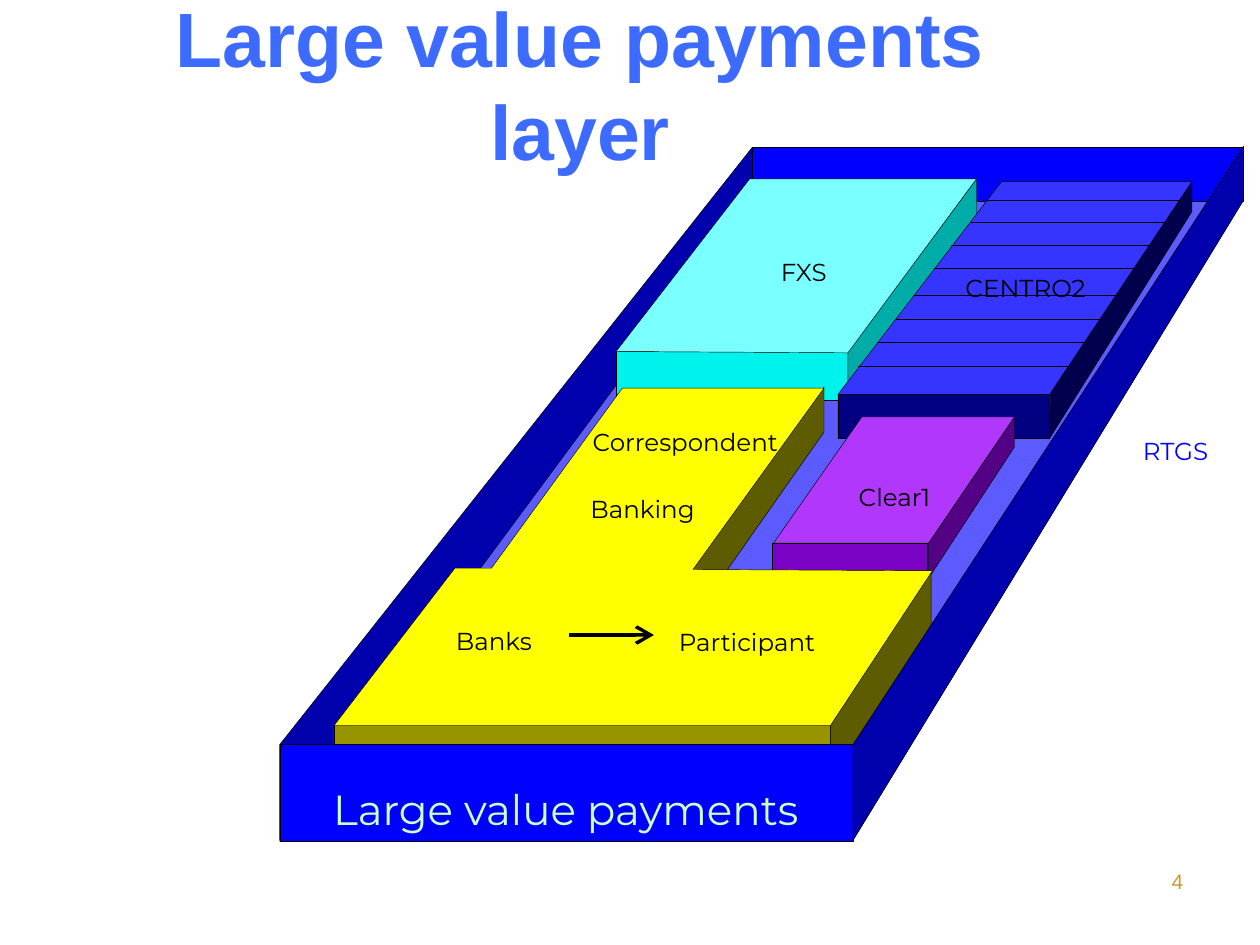
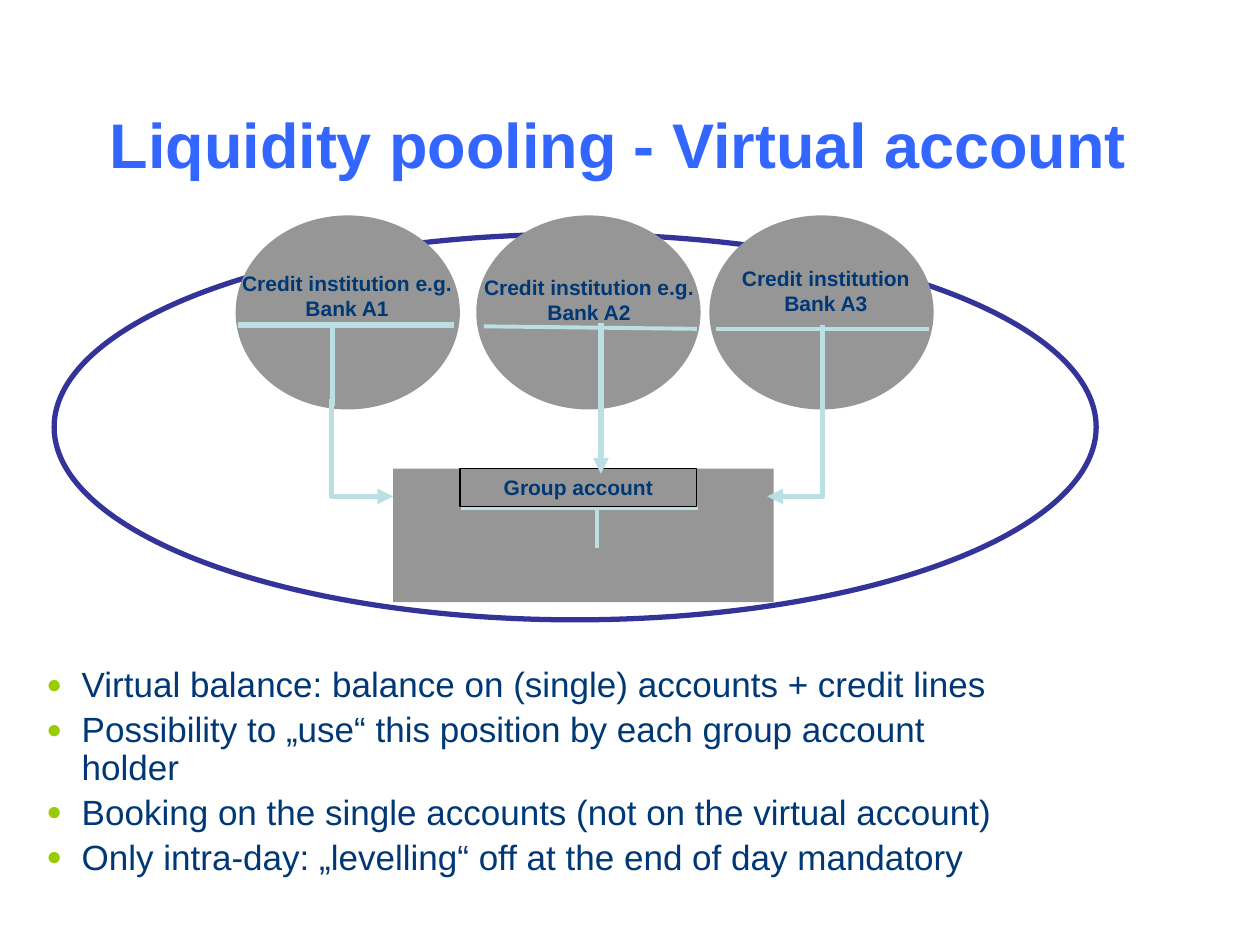
from dataclasses import dataclass

from lxml import etree
from pptx import Presentation
from pptx.dml.color import RGBColor
from pptx.enum.shapes import MSO_CONNECTOR, MSO_SHAPE
from pptx.enum.text import MSO_ANCHOR, PP_ALIGN
from pptx.oxml.ns import qn
from pptx.util import Inches, Pt

RECTANGLE, OVAL = MSO_SHAPE.RECTANGLE, MSO_SHAPE.OVAL
STRAIGHT = MSO_CONNECTOR.STRAIGHT
TOP, MIDDLE = MSO_ANCHOR.TOP, MSO_ANCHOR.MIDDLE
LEFT, CENTER, RIGHT = PP_ALIGN.LEFT, PP_ALIGN.CENTER, PP_ALIGN.RIGHT


@dataclass(frozen=True)
class Theme:
    heading_font: str = "Arial"
    label_font: str = "Montserrat"
    black: str = "000000"
    layer_title: str = "3D6BFF"
    pool_title: str = "3366FF"
    page_number: str = "CC9933"
    blue: str = "0000FF"
    tray_side: str = "0000AC"
    tray_floor: str = "5B5BFF"
    tray_text: str = "CCFFCC"
    # Each block: front, side, top
    cyan: tuple = ("00F2EC", "00ACA8", "79FFFF")
    navy: tuple = ("000080", "00004C", "3535FF")
    purple: tuple = ("7A02C4", "530185", "B237FD")
    yellow: tuple = ("989400", "5E5C00", "FFFF00")
    pool_ring: str = "333399"
    gray: str = "969696"
    flow: str = "BBE0E3"
    body: str = "003876"
    bullet: str = "99CC00"
    layer_title_size: int = 44
    pool_title_size: int = 36
    tray_size: int = 24
    body_size: int = 20
    label_size: int = 14
    small_size: int = 12
    hairline: float = 0.25
    thin: float = 0.75
    arrow: float = 2
    medium: float = 2.25
    thick: float = 3


THEME = Theme()


def rgb(color):
    return RGBColor.from_string(color)


def paint(shape, fill=None, line=None, width=THEME.hairline):
    shape.shadow.inherit = False
    if fill:
        shape.fill.solid()
        shape.fill.fore_color.rgb = rgb(fill)
    else:
        shape.fill.background()
    if line:
        shape.line.width = Pt(width)
        shape.line.color.rgb = rgb(line)
    else:
        shape.line.fill.background()


def write(shape, text, size, color, font=THEME.heading_font, bold=False,
          align=CENTER, anchor=TOP, wrap=True):
    """Fill a shape with text, one paragraph per line of text."""
    frame = shape.text_frame
    frame.text = text
    frame.word_wrap = wrap
    frame.vertical_anchor = anchor
    for paragraph in frame.paragraphs:
        paragraph.alignment = align
        for run in paragraph.runs:
            run.font.name = font
            run.font.size = Pt(size)
            run.font.bold = bold
            run.font.color.rgb = rgb(color)
    return frame


def add_text(slide, box, text, size, color, **style):
    shape = slide.shapes.add_textbox(*map(Inches, box))
    return write(shape, text, size, color, **style)


def add_title(slide, box, text, size, color):
    frame = add_text(slide, box, text, size, color, bold=True, anchor=MIDDLE)
    frame.margin_top = frame.margin_bottom = 0


def add_label(slide, center_x, top, text, color=THEME.black,
              size=THEME.label_size, width=1.3):
    """Add a one-line label centred on center_x."""
    add_text(slide, (center_x - width / 2, top, width, 0.34), text, size, color,
             font=THEME.label_font, wrap=False)


def add_box(slide, kind, box, fill=None, line=None, width=THEME.hairline):
    shape = slide.shapes.add_shape(kind, *map(Inches, box))
    paint(shape, fill, line, width)
    return shape


def add_outline(slide, points, closed=True):
    corners = [(Inches(x), Inches(y)) for x, y in points]
    builder = slide.shapes.build_freeform(*corners[0], scale=1.0)
    builder.add_line_segments(corners[1:], close=closed)
    return builder.convert_to_shape()


def add_face(slide, points, fill):
    paint(add_outline(slide, points), fill, THEME.black)


def add_block(slide, colors, front, sides, top):
    """Draw a solid block: front rectangle, side faces, then the top face."""
    front_color, side_color, top_color = colors
    add_box(slide, RECTANGLE, front, front_color, THEME.black)
    for side in sides:
        add_face(slide, side, side_color)
    add_face(slide, top, top_color)


def add_arrowhead(shape, kind, size="med"):
    line = shape._element.spPr.find(qn("a:ln"))
    etree.SubElement(line, qn("a:tailEnd"), type=kind, w=size, len=size)


def add_line(slide, start, end, color, width):
    connector = slide.shapes.add_connector(STRAIGHT, *map(Inches, (*start, *end)))
    connector.line.width = Pt(width)
    connector.line.color.rgb = rgb(color)
    etree.SubElement(connector._element.spPr, qn("a:effectLst"))
    return connector


def add_elbow_arrow(slide, points):
    shape = add_outline(slide, points, closed=False)
    paint(shape, None, THEME.flow, THEME.thick)
    add_arrowhead(shape, "triangle")


def add_bullets(slide, box, items):
    frame = add_text(slide, box, "\n".join(items), THEME.body_size, THEME.body,
                     align=LEFT)
    for index, paragraph in enumerate(frame.paragraphs):
        paragraph.line_spacing = 0.9
        if index:
            paragraph.space_before = Pt(4)
        properties = paragraph._p.get_or_add_pPr()
        properties.set("marL", str(Inches(0.28)))
        properties.set("indent", str(-Inches(0.28)))
        color = etree.SubElement(properties, qn("a:buClr"))
        etree.SubElement(color, qn("a:srgbClr"), val=THEME.bullet)
        etree.SubElement(properties, qn("a:buSzPct"), val="75000")
        etree.SubElement(properties, qn("a:buFont"), typeface=THEME.heading_font)
        etree.SubElement(properties, qn("a:buChar"), char="●")


def add_stripes(slide):
    """Rule lines across the navy block's slanted top."""
    heights = (1.59, 1.76, 1.95, 2.13, 2.34, 2.53, 2.72, 2.91)
    for y in heights:
        share = (y - heights[0]) / (heights[-1] - heights[0])
        add_line(slide, (7.83 - 1.02 * share, y), (9.36 - 0.88 * share, y),
                 THEME.black, THEME.hairline)


def build_layer_slide(slide):
    add_title(slide, (1.07, 0.27, 7.07, 0.78), "Large value payments layer",
              THEME.layer_title_size, THEME.layer_title)

    # Back of the tray
    add_face(slide, [(2.22, 5.91), (5.97, 1.17), (5.97, 1.6), (2.22, 6.67)],
             THEME.tray_side)
    add_face(slide, [(2.23, 6.65), (5.97, 1.6), (9.86, 1.6), (6.77, 6.67)],
             THEME.tray_floor)
    add_box(slide, RECTANGLE, (5.97, 1.17, 3.9, 0.43), THEME.blue, THEME.black)

    # Blocks standing in the tray
    add_block(slide, THEME.cyan, (4.89, 2.79, 1.84, 0.39),
              [[(6.73, 2.79), (7.75, 1.42), (7.75, 1.76), (6.73, 3.18)]],
              [(4.89, 2.79), (5.95, 1.42), (7.75, 1.42), (6.73, 2.8)])
    add_label(slide, 6.38, 1.99, "FXS")

    add_block(slide, THEME.navy, (6.65, 3.13, 1.68, 0.35),
              [[(8.34, 3.12), (9.46, 1.44), (9.46, 1.68), (8.33, 3.48)]],
              [(6.65, 3.13), (7.95, 1.44), (9.46, 1.44), (8.33, 3.13)])
    add_label(slide, 8.14, 2.12, "CENTRO2")
    add_stripes(slide)
    add_label(slide, 9.33, 3.41, "RTGS", THEME.blue)

    add_block(slide, THEME.purple, (6.13, 4.31, 1.23, 0.29),
              [[(7.37, 4.31), (8.05, 3.31), (8.05, 3.55), (7.37, 4.59)]],
              [(6.14, 4.31), (6.84, 3.31), (8.05, 3.31), (7.37, 4.31)])
    add_label(slide, 7.1, 3.78, "Clear1")

    add_block(slide, THEME.yellow, (2.65, 5.76, 3.94, 0.64),
              [[(6.59, 5.76), (7.39, 4.53), (7.39, 5.07), (6.59, 6.39)],
               [(5.5, 4.51), (6.54, 3.07), (6.54, 3.43), (5.5, 4.91)]],
              [(2.65, 5.76), (3.61, 4.51), (3.9, 4.51), (4.94, 3.08),
               (6.54, 3.08), (5.5, 4.52), (7.4, 4.53), (6.59, 5.76)])
    add_label(slide, 5.44, 3.34, "Correspondent", width=1.8)
    add_label(slide, 5.1, 3.87, "Banking")
    add_label(slide, 3.92, 4.92, "Banks")
    add_label(slide, 5.93, 4.93, "Participant", width=1.5)
    arrow = add_line(slide, (4.52, 5.04), (5.19, 5.04), THEME.black, THEME.arrow)
    add_arrowhead(arrow, "arrow", "lg")

    # Front of the tray
    add_box(slide, RECTANGLE, (2.22, 5.91, 4.55, 0.77), THEME.blue, THEME.black)
    add_label(slide, 4.49, 6.17, "Large value payments", THEME.tray_text,
              THEME.tray_size, width=4.42)
    add_face(slide, [(6.77, 5.91), (9.87, 1.16), (9.87, 1.59), (6.77, 6.67)],
             THEME.tray_side)

    add_text(slide, (8.65, 6.84, 0.84, 0.39), "4", THEME.small_size,
             THEME.page_number, align=RIGHT)


def build_pooling_slide(slide):
    add_title(slide, (0.51, 0.84, 8.8, 0.6), "Liquidity pooling - Virtual account",
              THEME.pool_title_size, THEME.pool_title)
    add_box(slide, OVAL, (0.43, 1.86, 8.27, 3.06), None, THEME.pool_ring, THEME.thick)
    for bank_left in (1.87, 3.78, 5.63):
        add_box(slide, OVAL, (bank_left, 1.71, 1.78, 1.54), THEME.gray)
    add_box(slide, RECTANGLE, (3.12, 3.72, 3.02, 1.06), THEME.gray)

    # Label box, account line and stem of each bank
    banks = [
        ((1.77, 2.1), "Credit institution e.g.\vBank A1",
         (1.89, 2.58), (3.6, 2.58), THEME.thick, (2.64, 2.57)),
        ((3.69, 2.13), "Credit institution e.g.\vBank A2",
         (3.84, 2.59), (5.53, 2.61), THEME.medium, (4.77, 2.56)),
        ((5.57, 2.06), "Credit institution Bank A3",
         (5.68, 2.61), (7.37, 2.61), THEME.medium, (6.53, 2.58)),
    ]
    for corner, name, line_start, line_end, width, stem in banks:
        add_line(slide, line_start, line_end, THEME.flow, width)
        add_text(slide, (*corner, 1.97, 0.5), name, THEME.small_size, THEME.body,
                 bold=True)
        stem_x, stem_y = stem
        add_line(slide, stem, (stem_x, stem_y + 0.65), THEME.flow, THEME.thick)

    add_line(slide, (3.66, 4.03), (5.54, 4.03), THEME.flow, THEME.medium)
    add_line(slide, (4.74, 4.02), (4.74, 4.35), THEME.flow, THEME.medium)
    group_account = add_box(slide, RECTANGLE, (3.65, 3.72, 1.88, 0.3), None,
                            THEME.black, THEME.thin)
    write(group_account, "Group account", THEME.small_size, THEME.body, bold=True,
          anchor=MIDDLE)

    add_elbow_arrow(slide, [(2.63, 3.17), (2.63, 3.94), (3.12, 3.94)])
    arrow = add_line(slide, (4.77, 3.16), (4.77, 3.76), THEME.flow, THEME.thick)
    add_arrowhead(arrow, "triangle")
    add_elbow_arrow(slide, [(6.53, 3.22), (6.53, 3.94), (6.09, 3.94)])

    add_bullets(slide, (0.27, 5.25, 8.59, 1.85), [
        "Virtual balance: balance on (single) accounts + credit lines",
        "Possibility to „use“ this position by each group account\vholder",
        "Booking on the single accounts (not on the virtual account)",
        "Only intra-day: „levelling“ off at the end of day mandatory",
    ])


def main():
    presentation = Presentation()
    presentation.slide_width = Inches(10)
    presentation.slide_height = Inches(7.5)
    blank = presentation.slide_layouts[6]
    for build in (build_layer_slide, build_pooling_slide):
        build(presentation.slides.add_slide(blank))
    presentation.save("out.pptx")


if __name__ == "__main__":
    main()
